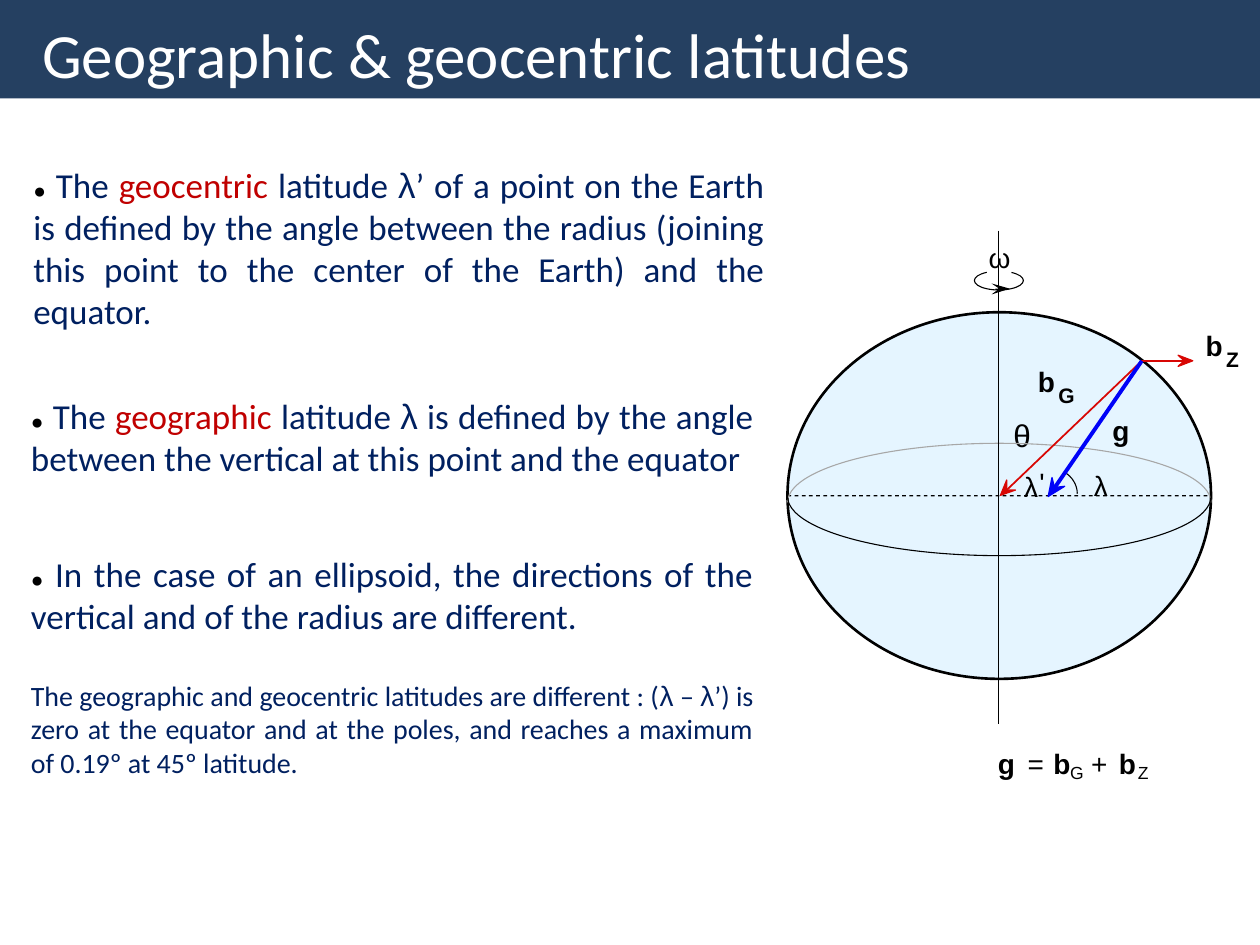
from lxml import etree
from pptx import Presentation
from pptx.dml.color import RGBColor
from pptx.enum.shapes import MSO_CONNECTOR, MSO_SHAPE
from pptx.enum.text import MSO_ANCHOR, MSO_AUTO_SIZE, PP_ALIGN
from pptx.oxml.ns import qn
from pptx.util import Pt

STRAIGHT = MSO_CONNECTOR.STRAIGHT
OVAL, ARC, RECT, ROUNDED = MSO_SHAPE.OVAL, MSO_SHAPE.ARC, MSO_SHAPE.RECTANGLE, MSO_SHAPE.ROUNDED_RECTANGLE
MIDDLE, TOP = MSO_ANCHOR.MIDDLE, MSO_ANCHOR.TOP
LEFT, JUSTIFY = PP_ALIGN.LEFT, PP_ALIGN.JUSTIFY
FIT, FIXED = MSO_AUTO_SIZE.SHAPE_TO_FIT_TEXT, MSO_AUTO_SIZE.NONE

BLACK, WHITE, GREY = "000000", "FFFFFF", "A7A7A7"
NAVY, DARK_RED, HEADER = "002060", "C00000", "254061"
RED, BLUE, SKY = "D80704", "0002F8", "E5F5FF"


def rgb(value):
    return RGBColor.from_string(value)


def text(x, y, w, h, paragraphs, size=16, font="Arial", color=BLACK, bold=False,
         wrap=False, inset=(0, 0), align=LEFT, anchor=TOP, fit=FIT, gap=0):
    """Paragraphs are a string, or lists of (text, format overrides) runs."""
    sp = s.shapes.add_textbox(Pt(x), Pt(y), Pt(w), Pt(h))
    tf = sp.text_frame
    tf.word_wrap, tf.auto_size, tf.vertical_anchor = wrap, fit, anchor
    tf.margin_left = tf.margin_right = Pt(inset[0])
    tf.margin_top = tf.margin_bottom = Pt(inset[1])
    if isinstance(paragraphs, str):
        paragraphs = [[(paragraphs, {})]]
    for i, runs in enumerate(paragraphs):
        p = tf.add_paragraph() if i else tf.paragraphs[0]
        p.alignment = align
        if i:
            p.space_before = Pt(gap)
        for content, fmt in runs:
            r = p.add_run()
            r.text = content
            r.font.name = fmt.get("font", font)
            r.font.size = Pt(fmt.get("size", size))
            r.font.bold = bold
            r.font.color.rgb = rgb(fmt.get("color", color))
    return sp


prs = Presentation()
prs.slide_width, prs.slide_height = Pt(720), Pt(540)
s = prs.slides.add_slide(prs.slide_layouts[6])

# Earth geometry
left, width, axis_x, equator_y = 450, 242, 570.8, 282.9

# Filled and outlined shapes: header, Earth, rotation ring, omega backing, equator dashes
dashes = [(RECT, left + 4.1 * i, equator_y, 2.16, 0.72, BLACK, None) for i in range(59)]
for kind, x, y, w, h, fill, weight in [
    (RECT, 0, 0, 720, 56.2, HEADER, None),
    (OVAL, left, 178.4, width, 209.5, SKY, 1.5),
    (OVAL, 556.8, 154.9, 28, 10.8, None, 0.63),
    (RECT, 568.8, 164.9, 1.4, 0.72, BLACK, None),
    (ROUNDED, 563.8, 144, 14.4, 13, WHITE, None),
] + dashes:
    sp = s.shapes.add_shape(kind, Pt(x), Pt(y), Pt(w), Pt(h))
    sp.shadow.inherit = False
    if fill:
        sp.fill.solid()
        sp.fill.fore_color.rgb = rgb(fill)
    else:
        sp.fill.background()
    if weight:
        sp.line.color.rgb = rgb(BLACK)
        sp.line.width = Pt(weight)
    else:
        sp.line.fill.background()

# Rotation symbol on white
sp = text(564.9, 137.5, 10.8, 19.4, "ω")
sp.fill.solid()
sp.fill.fore_color.rgb = rgb(WHITE)

# Symbols in the diagram
for x, y, w, label, size, bold in [
    (689, 187.9, 10, "b", 16, True),
    (700.6, 198, 7.2, "Z", 12, True),
    (593.1, 208.4, 10, "b", 16, True),
    (604.8, 218.5, 9.4, "G", 12, True),
    (635.6, 236.2, 10, "g", 16, True),
    (585.2, 268.4, 8.6, "λ", 16, False),
    (594, 265.9, 2.9, "'", 16, False),
    (579.1, 237.6, 9.4, "θ", 18, False),
    (625, 267.8, 8.6, "λ", 16, False),
    # Equation below the diagram
    (570.2, 426.7, 10, "g", 16, True),
    (587.3, 426.7, 9.4, "=", 16, False),
    (601.9, 426.7, 10, "b", 16, True),
    (611.5, 435.4, 8, "G", 10, False),
    (623.5, 426.7, 9.4, "+", 16, False),
    (639.4, 426.7, 10, "b", 16, True),
    (650.2, 435.4, 6.5, "Z", 10, False),
]:
    text(x, y, w, size * 1.2, label, size=size, bold=bold)

# Arcs: back and front of the equator, then the latitude angle
for x, y, w, h, start, end, color in [
    (left, 253.3, width, 67.6, 180, 0, GREY),
    (left, 249.9, width, 67.6, 0, 180, BLACK),
    (584, 267.6, 31.6, 29.2, 305, 0, BLACK),
]:
    sp = s.shapes.add_shape(ARC, Pt(x), Pt(y), Pt(w), Pt(h))
    sp.shadow.inherit = False
    sp.fill.background()
    sp.line.color.rgb = rgb(color)
    sp.line.width = Pt(0.63)
    # Adjustments count 60000ths of a degree in units of 100000
    sp.adjustments[0], sp.adjustments[1] = start * 0.6, end * 0.6

# Rotation axis and vector shafts
for x1, y1, x2, y2, color, weight in [
    (axis_x, 131.8, axis_x, 413.8, BLACK, 0.63),
    (652.8, 206.2, 677, 206.2, RED, 1),
    (652.5, 206.2, 575.3, 280, RED, 1),
    (652.5, 206.2, 601.2, 280.8, BLUE, 2.25),
]:
    line = s.shapes.add_connector(STRAIGHT, Pt(x1), Pt(y1), Pt(x2), Pt(y2))
    line.line.color.rgb = rgb(color)
    line.line.width = Pt(weight)
    etree.SubElement(line._element.spPr, qn("a:effectLst"))

# Notched arrowheads: notch, wing, tip, wing
for color, outlined, points in [
    (BLACK, False, [(571, 165), (566.6, 168.3), (577, 165), (566.6, 162)]),
    (RED, True, [(676.8, 206.2), (673.2, 209.4), (681.6, 206.2), (673.2, 203)]),
    (RED, True, [(575.3, 280), (575.3, 274.3), (571.7, 283), (580.3, 280)]),
    (BLUE, True, [(602.6, 278.6), (601.2, 272.9), (599, 283.7), (608.4, 277.9)]),
]:
    (x, y), *rest = [(Pt(px), Pt(py)) for px, py in points]
    builder = s.shapes.build_freeform(x, y)
    builder.add_line_segments(rest, close=True)
    sp = builder.convert_to_shape()
    sp.shadow.inherit = False
    sp.fill.solid()
    sp.fill.fore_color.rgb = rgb(color)
    if outlined:
        sp.line.color.rgb = rgb(color)
        sp.line.width = Pt(0.75)
    else:
        sp.line.fill.background()

# Explanations
bullet = [("●", {"size": 12, "font": "Arial", "color": BLACK}), (" ", {})]
red, greek = {"color": DARK_RED}, {"font": "Arial"}
small, small_greek = {"size": 16}, {"size": 16, "font": "Arial"}
for x, y, w, h, paragraphs in [
    (12, 90, 432, 108, [bullet + [
        ("The ", {}), ("geocentric", red), (" latitude ", {}), ("λ", greek),
        ("’ of a point on the Earth is defined by the angle between the radius "
         "(joining this point to the center of the Earth) and the equator.", {})]]),
    (10.6, 221.8, 427, 55.4, [bullet + [
        ("The ", {}), ("geographic", red), (" latitude ", {}), ("λ", greek),
        (" is defined by the angle between the vertical at this point and the equator", {})]]),
    (10.6, 312.1, 427, 138.2, [
        bullet + [("In the case of an ellipsoid, the directions of the vertical "
                   "and of the radius are different.", {})],
        [("The geographic and geocentric latitudes are different : (", small),
         ("λ", small_greek), (" – ", small), ("λ", small_greek),
         ("’) is zero at the equator and at the poles, and reaches a maximum "
          "of 0.19º at 45º latitude.", small)]]),
]:
    text(x, y, w, h, paragraphs, size=20, font="Calibri", color=NAVY, wrap=True,
         inset=(7.2, 3.6), align=JUSTIFY, gap=24)

# Title
text(17, 11.1, 685.4, 38.9, "Geographic & geocentric latitudes", size=36, font="Calibri",
     color=WHITE, wrap=True, inset=(7.2, 3.6), anchor=MIDDLE, fit=FIXED)

prs.save("out.pptx")
